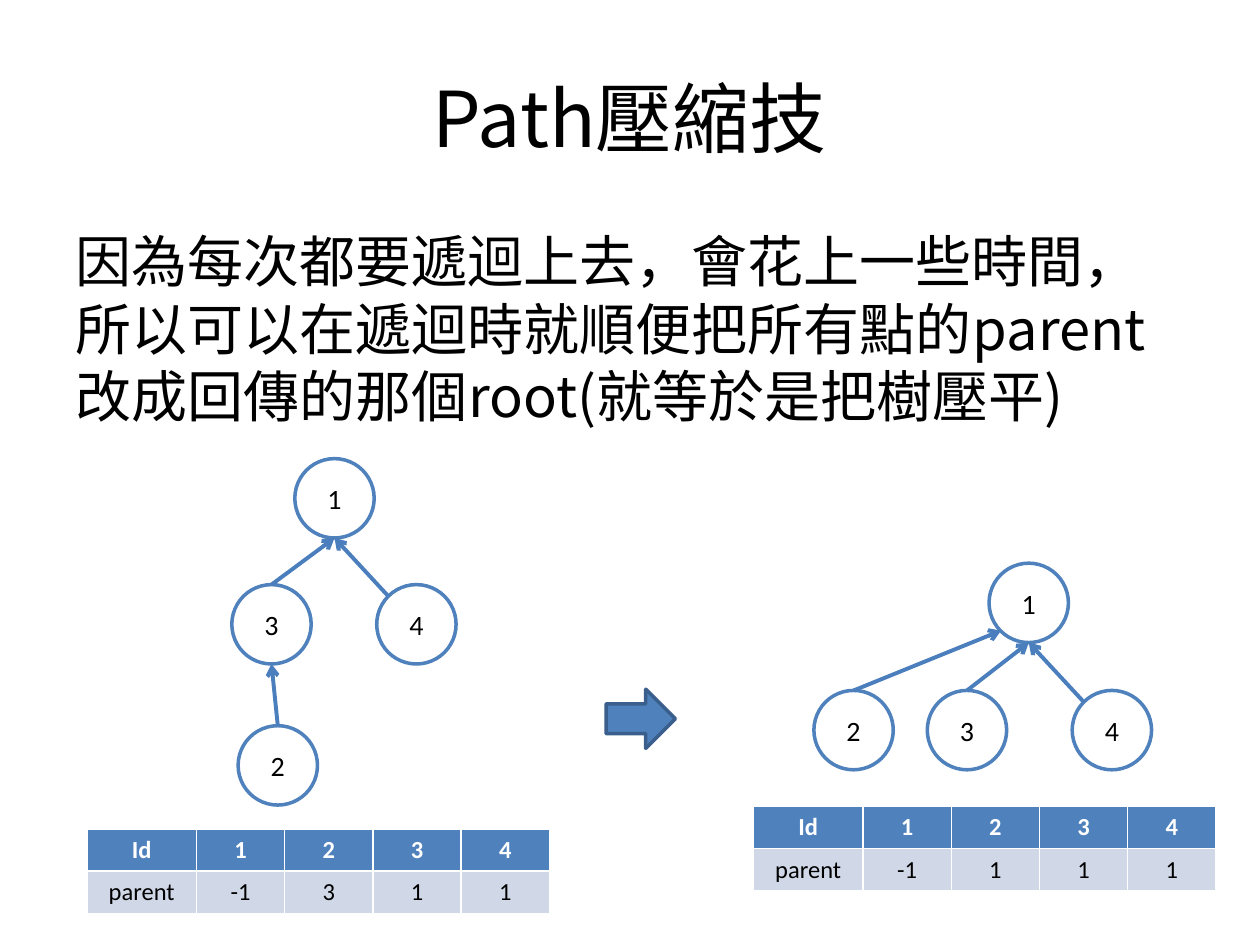
"""Build the path compression slide: two trees with their parent tables."""
from lxml import etree
from pptx import Presentation
from pptx import util as u
from pptx.dml.color import RGBColor
from pptx.enum import shapes, text
from pptx.oxml.ns import qn

COLORS = {"black": "000000", "white": "FFFFFF", "blue": "4F81BD",
          "edge": "4B7EBC", "dark": "3A5F8C", "pale": "D0D8E8"}
COLORS = {name: RGBColor.from_string(value) for name, value in COLORS.items()}
CJK = "Noto Sans CJK SC"

prs = Presentation()
prs.slide_width, prs.slide_height = u.Inches(10), u.Inches(7.5)
UNIT = prs.slide_width // 100


def grid(*cells):
    """Turn counts of grid units into lengths."""
    return [u.Emu(round(c * UNIT)) for c in cells]


def write(tf, words, font="Calibri", size=16, color="black", bold=False,
          align=text.PP_ALIGN.CENTER):
    """Put one formatted paragraph in a text frame."""
    p = tf.paragraphs[0]
    p.alignment = align
    r = p.add_run()
    r.text = words
    r.font.name, r.font.size, r.font.bold = font, u.Pt(size), bold
    r.font.color.rgb = COLORS[color]
    etree.SubElement(r.font._element, qn("a:ea"), typeface=font)
    return p


s = prs.slides.add_slide(prs.slide_layouts[1])
title, body = s.placeholders
title.left, title.top, title.width, title.height = grid(5, 3, 90, 12.5)
body.left, body.top, body.width, body.height = grid(5, 17.5, 90, 49.5)
write(title.text_frame, "Path壓縮技", font=CJK, size=44)
p = write(body.text_frame,
          "因為每次都要遞迴上去，會花上一些時間，所以可以在遞迴時就順便把所有點的"
          "parent改成回傳的那個root(就等於是把樹壓平)",
          font=CJK, size=32, align=text.PP_ALIGN.LEFT)
pPr = p._p.get_or_add_pPr()
pPr.set("marL", "0")
pPr.set("indent", "0")
etree.SubElement(pPr, qn("a:buNone"))

NODE = 6.3
SITES = {"top": (0.5, 0), "top left": (0.15, 0.15),
         "bottom": (0.5, 1), "bottom left": (0.15, 0.85)}
trees = [
    {"nodes": {1: (23.4, 36.4), 2: (18.9, 57.6), 3: (18.4, 46.4), 4: (29.9, 46.4)},
     "edges": [(3, "bottom", 2, "top"), (1, "bottom", 4, "top left"),
               (1, "bottom", 3, "top")],
     "table": (6.9, 65.8), "parents": (-1, 3, 1, 1)},
    {"nodes": {1: (78.5, 44.7), 2: (64.6, 54.8), 3: (73.6, 54.8), 4: (85.1, 54.8)},
     "edges": [(1, "bottom left", 2, "top"), (1, "bottom", 4, "top left"),
               (1, "bottom", 3, "top")],
     "table": (59.8, 64), "parents": (-1, 1, 1, 1)},
]

for tree in trees:
    nodes = tree["nodes"]
    for name, (x, y) in nodes.items():
        sp = s.shapes.add_shape(shapes.MSO_SHAPE.OVAL, *grid(x, y, NODE, NODE))
        sp.shadow.inherit = False
        sp.fill.solid()
        sp.fill.fore_color.rgb = COLORS["white"]
        sp.line.color.rgb, sp.line.width = COLORS["blue"], u.Pt(2)
        write(sp.text_frame, str(name))

    for parent, parent_site, child, child_site in tree["edges"]:
        ends = [at + NODE * share
                for node, site in ((parent, parent_site), (child, child_site))
                for at, share in zip(nodes[node], SITES[site])]
        edge = s.shapes.add_connector(shapes.MSO_CONNECTOR.STRAIGHT, *grid(*ends))
        edge.line.color.rgb, edge.line.width = COLORS["edge"], u.Pt(2.25)
        etree.SubElement(edge.line._get_or_add_ln(), qn("a:headEnd"), type="arrow")
        etree.SubElement(edge._element.spPr, qn("a:effectLst"))

    rows = [("Id", *nodes), ("parent", *tree["parents"])]
    table = s.shapes.add_table(2, 5, *grid(*tree["table"], 36.7, 6.7)).table
    for col, width in zip(table.columns, grid(8.7, 7, 7, 7, 7)):
        col.width = width
    for i, row in enumerate(rows):
        fill, color = (("blue", "white"), ("pale", "black"))[i]
        for j, value in enumerate(row):
            cell = table.cell(i, j)
            cell.margin_top = cell.margin_bottom = u.Inches(0.04)
            cell.vertical_anchor = text.MSO_ANCHOR.MIDDLE
            cell.fill.solid()
            cell.fill.fore_color.rgb = COLORS[fill]
            write(cell.text_frame, str(value), size=14, color=color, bold=i == 0)

arrow = s.shapes.add_shape(shapes.MSO_SHAPE.RIGHT_ARROW, *grid(48.1, 54.7, 5.5, 4.7))
arrow.shadow.inherit = False
arrow.fill.solid()
arrow.fill.fore_color.rgb = COLORS["blue"]
arrow.line.color.rgb, arrow.line.width = COLORS["dark"], u.Pt(2)

prs.save("out.pptx")
